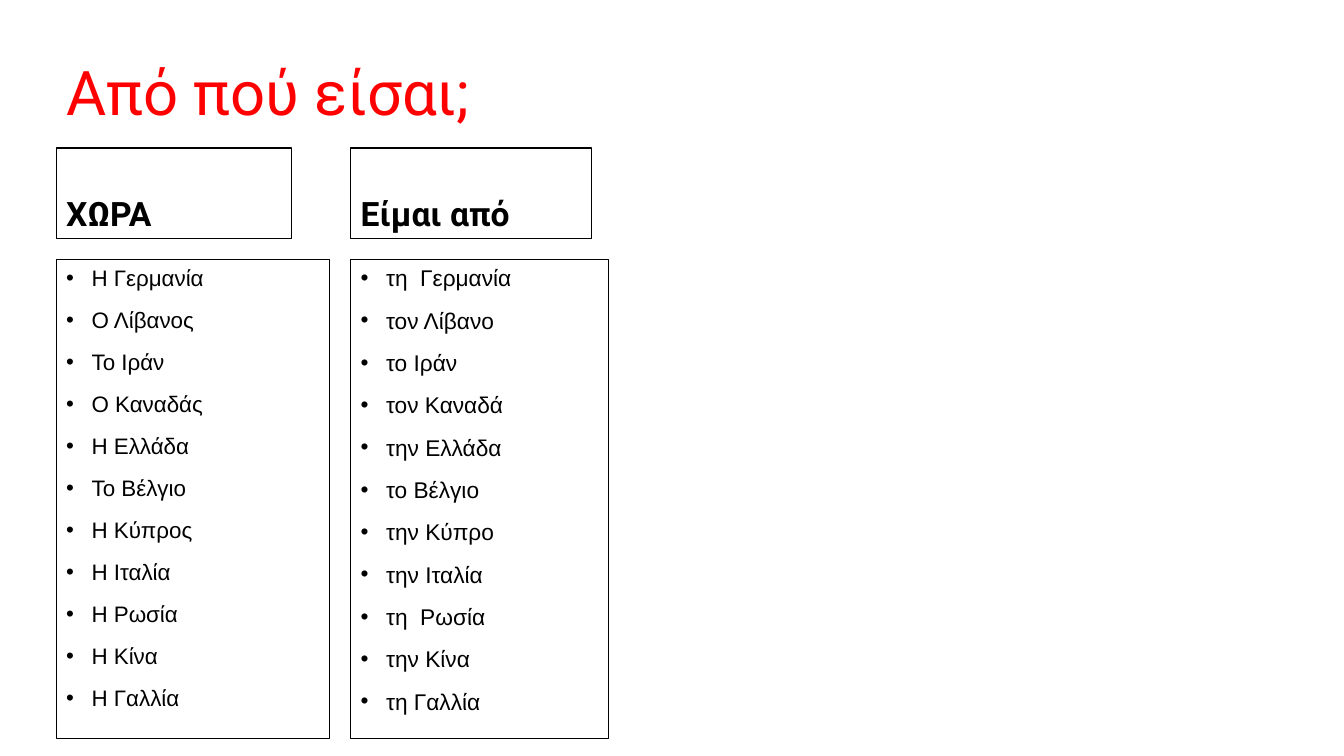
"""Build a slide that pairs Greek country names with their form after «από»."""
from lxml.etree import SubElement as Sub
from pptx import Presentation
from pptx.dml.color import RGBColor as Rgb
from pptx.enum.text import MSO_ANCHOR as Anchor
from pptx.oxml.ns import qn
from pptx.util import Cm, Pt

INK = {"title": "FF0000", "text": "000000", "line": "000000"}
LEAD = Cm(0.64)

PAIRS = [
    ("Η Γερμανία", "τη  Γερμανία"),
    ("Ο Λίβανος", "τον Λίβανο"),
    ("Το Ιράν", "το Ιράν"),
    ("Ο Καναδάς", "τον Καναδά"),
    ("Η Ελλάδα", "την Ελλάδα"),
    ("Το Βέλγιο", "το Βέλγιο"),
    ("Η Κύπρος", "την Κύπρο"),
    ("Η Ιταλία", "την Ιταλία"),
    ("Η Ρωσία", "τη  Ρωσία"),
    ("Η Κίνα", "την Κίνα"),
    ("Η Γαλλία", "τη Γαλλία"),
]
LANDS, FORMS = zip(*PAIRS)

COLS = [
    ("ΧΩΡΑ", 1.42, 5.94, LANDS, 6.88, 16),
    ("Είμαι από", 8.84, 6.07, FORMS, 6.5, 16.2),
]

deck = Presentation()
deck.slide_width, deck.slide_height = Cm(33.87), Cm(19.05)
slide = deck.slides.add_slide(deck.slide_layouts[6])


def add_text(spot, lines, size, face, ink, anchor, bold=False):
    """Add a text box with one paragraph per line."""
    box = slide.shapes.add_textbox(*map(Cm, spot))
    frame = box.text_frame
    frame.word_wrap = True
    frame.vertical_anchor = anchor
    frame.text = "\n".join(lines)
    for para in frame.paragraphs:
        font = para.runs[0].font
        font.size, font.name, font.bold = Pt(size), face, bold
        font.color.rgb = Rgb.from_string(INK[ink])
    return box


def add_frame(box):
    """Draw a thin outline round a box."""
    box.line.color.rgb = Rgb.from_string(INK["line"])
    box.line.width = Pt(0.75)


title = add_text((1.42, 0.58, 29.21, 3.68), ["Από πού είσαι;"],
                 44, "Roboto", "title", Anchor.MIDDLE)
title.text_frame.paragraphs[0].line_spacing = 0.9

for name, left, wide, words, span, size in COLS:
    head = add_text((left, 3.73, wide, 2.29), [name],
                    24, "Roboto", "text", Anchor.BOTTOM, True)
    head.text_frame.paragraphs[0].line_spacing = 0.9
    add_frame(head)

    body = add_text((left, 6.53, span, 12.09), words,
                    size, "Arial", "text", Anchor.TOP)
    add_frame(body)
    for i, para in enumerate(body.text_frame.paragraphs):
        if i:
            para.space_before = Pt(10.8)
        props = para._p.get_or_add_pPr()
        props.set("marL", str(LEAD))
        props.set("indent", str(-LEAD))
        Sub(props, qn("a:buFont")).set("typeface", "Arial")
        Sub(props, qn("a:buChar")).set("char", "•")

deck.save("out.pptx")
